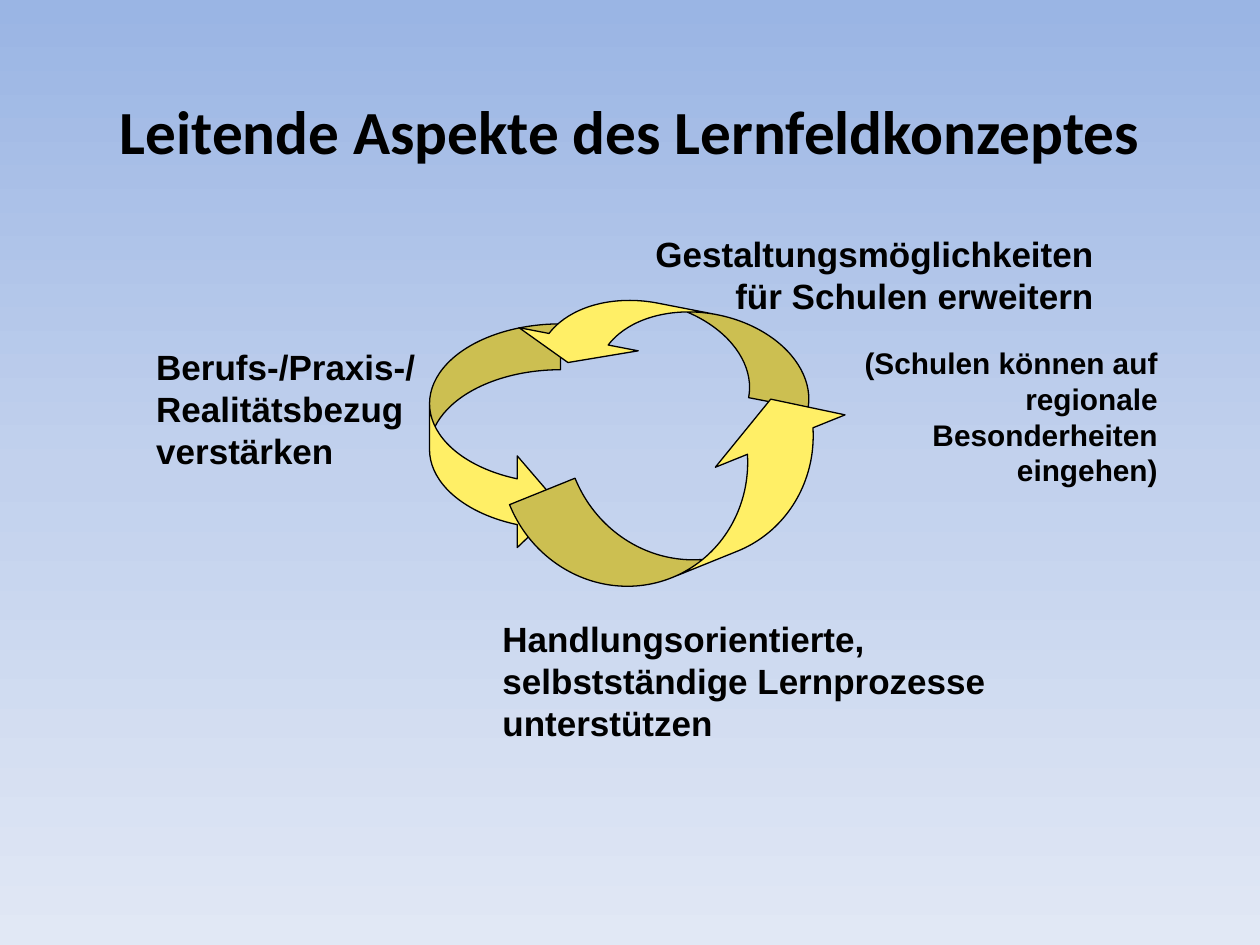
import copy
import dataclasses

import pptx
import pptx.dml.color
import pptx.enum.shapes
import pptx.enum.text
import pptx.oxml.ns
import pptx.util

Cm = pptx.util.Cm
Pt = pptx.util.Pt
Align = pptx.enum.text.PP_ALIGN
AutoSize = pptx.enum.text.MSO_AUTO_SIZE


@dataclasses.dataclass(frozen=True)
class Theme:
    background: tuple = ((0, "9AB5E4"), (0.5, "C2D1ED"), (1, "E1E8F5"))
    text: str = "000000"
    arrow: str = "FFEF66"
    outline: str = "000000"
    outline_width: float = 0.75
    title_font: str = "Calibri"
    body_font: str = "Arial"
    title_size: int = 35
    caption_size: int = 20
    note_size: int = 17


THEME = Theme()


@dataclasses.dataclass(frozen=True)
class Box:
    """An area in centimetres."""
    left: float
    top: float
    width: float
    height: float

    def inside(self, left, top, width, height):
        return Box(self.left + left, self.top + top, width, height)

    def lengths(self):
        return [Cm(value) for value in dataclasses.astuple(self)]


def color(value):
    return pptx.dml.color.RGBColor.from_string(value)


def set_attributes(target, values):
    for name, value in values.items():
        setattr(target, name, value)


def write_text(shape, text, font, size, alignment, frame_format):
    frame = shape.text_frame
    frame.text = text
    set_attributes(frame, {"word_wrap": True, **frame_format})
    paragraph = frame.paragraphs[0]
    paragraph.alignment = alignment
    run_font = paragraph.runs[0].font
    set_attributes(run_font, {"name": font, "size": Pt(size), "bold": True})
    run_font.color.rgb = color(THEME.text)


def paint_background(slide):
    fill = slide.background.fill
    fill.gradient()
    fill.gradient_angle = 270
    # The default gradient has two stops; a third is added for the middle
    stop_list = slide.element.find(".//" + pptx.oxml.ns.qn("a:gsLst"))
    stop_list.append(copy.deepcopy(stop_list[-1]))
    for stop, (position, value) in zip(fill.gradient_stops, THEME.background):
        stop.position = position
        stop.color.rgb = color(value)


def place_title(slide, box):
    title = slide.shapes.title
    names = ("left", "top", "width", "height")
    set_attributes(title, dict(zip(names, box.lengths())))
    write_text(title, "Leitende Aspekte des Lernfeldkonzeptes",
               THEME.title_font, THEME.title_size, Align.CENTER,
               {"vertical_anchor": pptx.enum.text.MSO_ANCHOR.MIDDLE,
                "auto_size": AutoSize.NONE})


def place_cycle(slide, box):
    # Place in the box, rotation, arrow proportions
    arrows = (
        ((0, 2.69, 2.64, 4.6), 0, (0.35, 0.7, 0.33)),
        ((3.99, 0, 1.52, 6.15), 101, (0.8, 1.61, 0.33)),
        ((4.09, 2.66, 2.59, 7.09), 248, (0.55, 1.09, 0.33)),
    )
    for place, rotation, proportions in arrows:
        arrow = slide.shapes.add_shape(
            pptx.enum.shapes.MSO_SHAPE.CURVED_RIGHT_ARROW,
            *box.inside(*place).lengths())
        arrow.rotation = rotation
        for index, proportion in enumerate(proportions):
            arrow.adjustments[index] = proportion
        arrow.shadow.inherit = False
        arrow.fill.solid()
        arrow.fill.fore_color.rgb = color(THEME.arrow)
        arrow.line.color.rgb = color(THEME.outline)
        arrow.line.width = Pt(THEME.outline_width)


def place_captions(slide, box):
    captions = (
        ("Berufs-/Praxis-/ Realitätsbezug verstärken",
         (0, 2.26, 6.6, 2.79), THEME.caption_size, Align.LEFT),
        ("Handlungsorientierte, selbstständige Lernprozesse unterstützen",
         (6.98, 7.75, 10.41, 2.79), THEME.caption_size, Align.LEFT),
        ("Gestaltungsmöglichkeiten für Schulen erweitern",
         (9.8, 0, 9.6, 1.98), THEME.caption_size, Align.RIGHT),
        ("(Schulen können auf regionale Besonderheiten eingehen)",
         (14.09, 2.26, 6.6, 3.18), THEME.note_size, Align.RIGHT),
    )
    for text, place, size, alignment in captions:
        caption = slide.shapes.add_textbox(*box.inside(*place).lengths())
        write_text(caption, text, THEME.body_font, size, alignment,
                   {"auto_size": AutoSize.SHAPE_TO_FIT_TEXT})


def main():
    presentation = pptx.Presentation()
    set_attributes(presentation, {"slide_width": Cm(25.4),
                                  "slide_height": Cm(19.05)})
    title_only = presentation.slide_layouts.get_by_name("Title Only")
    slide = presentation.slides.add_slide(title_only)
    paint_background(slide)
    place_title(slide, Box(0, 0.4, 25.4, 4.45))
    place_cycle(slide, Box(8.66, 3.84, 8.4, 9.75))
    place_captions(slide, Box(2.9, 4.57, 20.69, 10.54))
    presentation.save("out.pptx")


if __name__ == "__main__":
    main()
